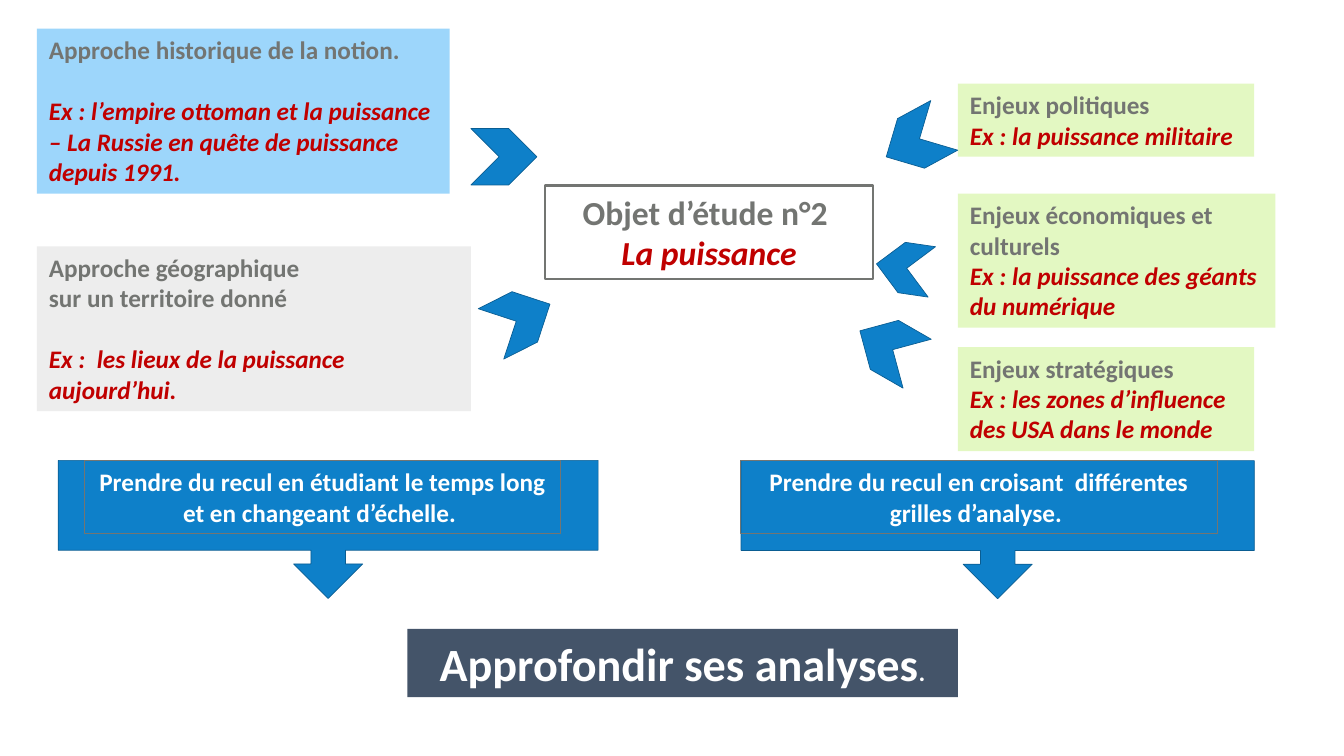
from pptx import Presentation
from pptx import util as u
from pptx.dml.color import RGBColor
from pptx.enum import shapes, text

PX = 9144
FONT = "Calibri"
BLUE, BLUE_EDGE = "0E80C9", "0A5D92"
GREY, RED, WHITE = "737572", "C00000", "FFFFFF"
GREEN, SKY, PALE, SLATE = "E3F8C2", "9DD6FB", "EDEDED", "445469"
BODY = 36
BLANK_LINE = 44

topic = ("Objet d’étude n°2 ", "La puissance")
topic_place = (1081, 368, 651, 186)

approaches = [
    ((73, 57, 819, 327), SKY, ["Approche historique de la notion."],
     "Ex : l’empire ottoman et la puissance – La Russie en quête de puissance depuis 1991."),
    ((73, 489, 861, 327), PALE, ["Approche géographique", "sur un territoire donné"],
     "Ex :  les lieux de la puissance aujourd’hui."),
]
issues = [
    ((1900, 166, 588, 145), "Enjeux politiques", "Ex : la puissance militaire"),
    ((1900, 384, 630, 266), "Enjeux économiques et culturels",
     "Ex : la puissance des géants du numérique"),
    ((1900, 689, 588, 206), "Enjeux stratégiques",
     "Ex : les zones d’influence des USA dans le monde"),
]
callouts = [
    ((116, 914, 1071, 274), 167,
     "Prendre du recul en étudiant le temps long et en changeant d’échelle. "),
    ((1470, 914, 1018, 274), 1469,
     "Prendre du recul en croisant  différentes grilles d’analyse. "),
]
chevrons = [
    ((934, 255, 131, 112), 0),
    ((967, 577, 131, 112), 333.2),
    ((1750, 224, 131, 112), 151.5),
    ((1738, 481, 111, 101), 188.3),
    ((1697, 633, 131, 112), 209.9),
]
conclusion = [("Approfondir ses analyses", 66), (".", BODY)]
conclusion_place = (808, 1248, 1092, 135)


def color(value):
    return RGBColor.from_string(value)


def style(part, fill=None, edge=None, width=1):
    if fill:
        part.fill.solid()
        part.fill.fore_color.rgb = color(fill)
    else:
        part.fill.background()
    if edge:
        part.line.color.rgb = color(edge)
        part.line.width = u.Pt(width)
    else:
        part.line.fill.background()


def add_part(kind, place, **look):
    part = slide.shapes.add_shape(kind, *(n * PX for n in place))
    part.shadow.inherit = False
    style(part, **look)
    return part


def write(part, paragraphs, align=text.PP_ALIGN.LEFT):
    frame = part.text_frame
    frame.word_wrap = True
    frame.auto_size = text.MSO_AUTO_SIZE.NONE
    frame.vertical_anchor = text.MSO_ANCHOR.TOP
    frame.margin_left = frame.margin_right = 24 * PX
    frame.margin_top = frame.margin_bottom = 12 * PX
    for index, (runs, before) in enumerate(paragraphs):
        line = frame.paragraphs[0] if index == 0 else frame.add_paragraph()
        line.alignment = align
        line.space_before = u.Pt(before)
        for words, size, ink, italic in runs:
            run = line.add_run()
            run.text = words
            run.font.name = FONT
            run.font.size = u.Pt(size)
            run.font.bold = True
            run.font.italic = italic
            run.font.color.rgb = color(ink)


def heading_and_example(headings, example, size=BODY, gap=0):
    lines = [([(words, size, GREY, False)], 0) for words in headings]
    return lines + [([(example, size, RED, True)], gap)]


deck = Presentation()
deck.slide_width, deck.slide_height = 2666 * PX, 1500 * PX
slide = deck.slides.add_slide(deck.slide_layouts[5])
RECT = shapes.MSO_SHAPE.RECTANGLE
CENTER = text.PP_ALIGN.CENTER

title = slide.shapes.title
title.left, title.top, title.width, title.height = (n * PX for n in topic_place)
style(title, edge=GREY, width=3)
write(title, heading_and_example(topic[:1], topic[1], size=48), CENTER)

for place, fill, headings, example in approaches:
    write(add_part(RECT, place, fill=fill),
          heading_and_example(headings, example, gap=BLANK_LINE))

for place, heading, example in issues:
    write(add_part(RECT, place, fill=GREEN), heading_and_example([heading], example))

for (left, top, width, height), label_left, words in callouts:
    shift = (width - height) / 2
    turned = (int(left + shift), int(top - shift), height, width)
    callout = add_part(shapes.MSO_SHAPE.RIGHT_ARROW_CALLOUT, turned, fill=BLUE, edge=BLUE_EDGE)
    callout.rotation = 90
    for index, ratio in enumerate((0.25, 0.25, 0.25, 0.65)):
        callout.adjustments[index] = ratio
    label = add_part(RECT, (label_left, top, 945, 145), edge=GREY)
    write(label, [([(words, BODY, WHITE, False)], 0)], CENTER)

for place, angle in chevrons:
    chevron = add_part(shapes.MSO_SHAPE.CHEVRON, place, fill=BLUE, edge=BLUE_EDGE)
    chevron.rotation = angle

write(add_part(RECT, conclusion_place, fill=SLATE),
      [([(words, size, WHITE, False) for words, size in conclusion], 0)], CENTER)

deck.save("out.pptx")
